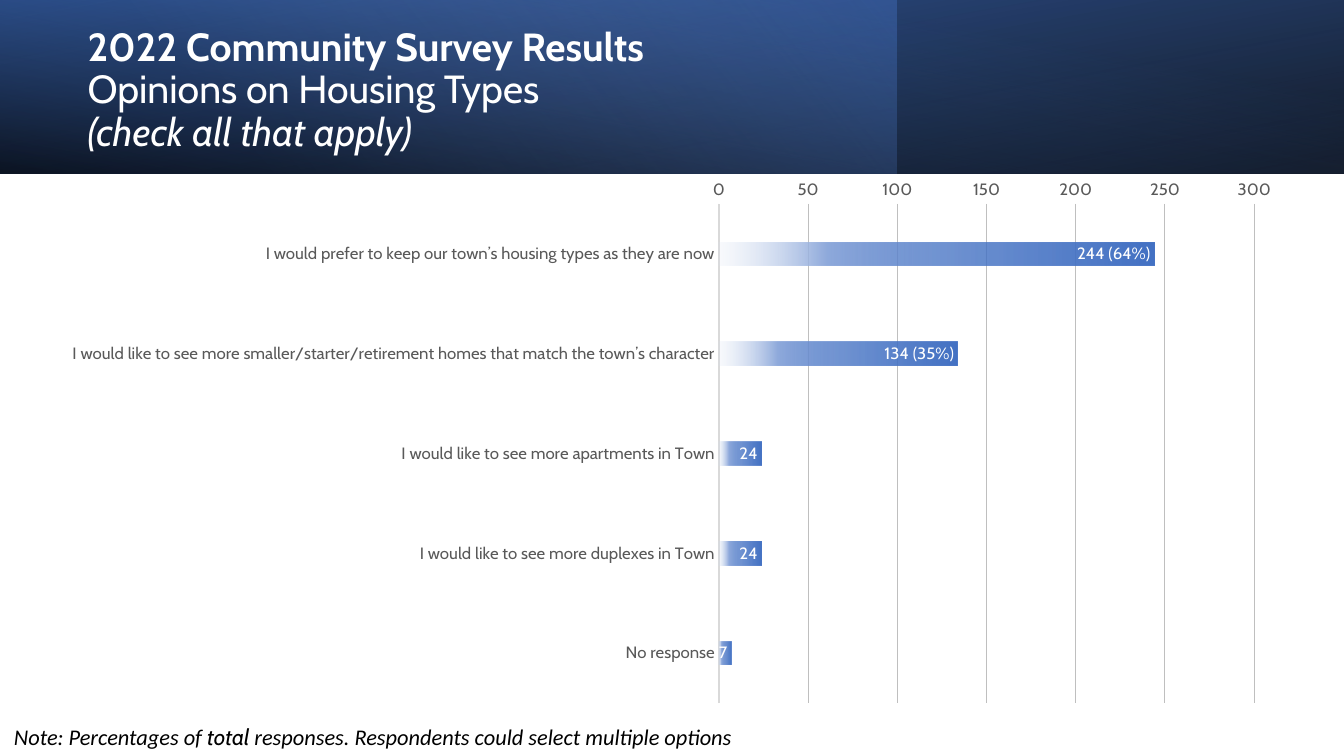
from dataclasses import dataclass

from lxml import etree
from pptx import Presentation
from pptx.chart.data import CategoryChartData
from pptx.dml.color import RGBColor
from pptx.enum.chart import XL_AXIS_CROSSES, XL_CHART_TYPE, XL_LABEL_POSITION, XL_TICK_MARK
from pptx.enum.shapes import MSO_SHAPE
from pptx.enum.text import MSO_ANCHOR, MSO_AUTO_SIZE
from pptx.oxml import parse_xml
from pptx.oxml.ns import nsdecls, qn
from pptx.util import Inches, Pt

RECTANGLE = MSO_SHAPE.RECTANGLE
BAR = XL_CHART_TYPE.BAR_CLUSTERED
INSIDE_END = XL_LABEL_POSITION.INSIDE_END
NO_TICK = XL_TICK_MARK.NONE
AT_MAXIMUM = XL_AXIS_CROSSES.MAXIMUM
MIDDLE = MSO_ANCHOR.MIDDLE
GROW = MSO_AUTO_SIZE.SHAPE_TO_FIT_TEXT

SLIDE_WIDTH, SLIDE_HEIGHT = 13.33, 7.5
BANNER_HEIGHT = 1.72
CHART_BOX = (0.47, 1.79, 12.39, 5.53)
PLOT_BOX = (7.13, 1.9, 5.31, 5.07)

TITLE = {"size": Pt(28), "name": "Cabin", "color": "FFFFFF"}
NOTE = {"size": Pt(16), "name": "Calibri", "color": "000000", "italic": True}
AXIS = {"size": Pt(12), "name": "Cabin", "color": "595959"}
BAR_LABEL = {"size": Pt(12), "name": "Cabin", "color": "FFFFFF"}


@dataclass
class Stop:
    position: int
    color: str
    opacity: int = 100


@dataclass
class BannerLayer:
    width: float
    angle: int
    stops: list[Stop]
    flipped: bool = False
    rotation: int = 0


@dataclass
class Answer:
    wording: str
    count: int
    label: str = ""


@dataclass
class Span:
    wording: str
    style: dict


BANNER = [
    BannerLayer(SLIDE_WIDTH, 100, [Stop(0, "000000", 96), Stop(100, "2F5597")], True, 180),
    BannerLayer(8.89, 140, [Stop(0, "4472C4", 41), Stop(74, "8FAADC", 0)]),
    BannerLayer(SLIDE_WIDTH, 260, [Stop(0, "000000", 63), Stop(78, "4472C4", 15)], True),
]
BAR_STOPS = [Stop(0, "4472C4"), Stop(51, "4472C4", 75), Stop(75, "8FAADC"), Stop(100, "DAE3F3", 15)]
ANSWERS = [
    Answer("I would prefer to keep our town’s housing types as they are now", 244, "244 (64%)"),
    Answer("I would like to see more smaller/starter/retirement homes that match the town’s character",
           134, "134 (35%)"),
    Answer("I would like to see more apartments in Town", 24),
    Answer("I would like to see more duplexes in Town", 24),
    Answer("No response", 7),
]
TITLE_LINES = [
    Span("2022 Community Survey Results", TITLE | {"bold": True}),
    Span("Opinions on Housing Types", TITLE),
    Span("(check all that apply)", TITLE | {"italic": True}),
]
NOTE_SPANS = [
    Span("Note: Percentages of ", NOTE),
    Span("total", NOTE | {"name": "Cabin"}),
    Span(" responses. Respondents could select multiple options", NOTE),
]


def rgb(color: str) -> RGBColor:
    return RGBColor.from_string(color)


def style_font(font, style: dict) -> None:
    for name, value in style.items():
        if name == "color":
            font.color.rgb = rgb(value)
        else:
            setattr(font, name, value)


def fill_gradient(fill, properties, stops: list[Stop], angle: int) -> None:
    """Give the fill its stops, with opacity, and a clockwise angle."""
    fill.gradient()
    gradient = properties.find(qn("a:gradFill"))
    for child in list(gradient):
        gradient.remove(child)
    stop_list = etree.SubElement(gradient, qn("a:gsLst"))
    for stop in stops:
        mark = etree.SubElement(stop_list, qn("a:gs"), pos=str(stop.position * 1000))
        color = etree.SubElement(mark, qn("a:srgbClr"), val=stop.color)
        if stop.opacity < 100:
            etree.SubElement(color, qn("a:alpha"), val=str(stop.opacity * 1000))
    etree.SubElement(gradient, qn("a:lin"), ang=str(angle * 60000), scaled="0")


def add_banner_layer(page, layer: BannerLayer) -> None:
    shape = page.shapes.add_shape(RECTANGLE, 0, 0, Inches(layer.width), Inches(BANNER_HEIGHT))
    shape.shadow.inherit = False
    shape.line.fill.background()
    shape.rotation = layer.rotation
    properties = shape.element.spPr
    if layer.flipped:
        properties.find(qn("a:xfrm")).set("flipH", "1")
    fill_gradient(shape.fill, properties, layer.stops, layer.angle)


def add_text(page, place: tuple, spans: list[Span], stacked: bool = False):
    """Write the spans as one paragraph, each on its own line when stacked."""
    box = page.shapes.add_textbox(*map(Inches, place))
    para = box.text_frame.paragraphs[0]
    for index, span in enumerate(spans):
        if stacked and index:
            para.add_line_break()
        run = para.add_run()
        run.text = span.wording
        style_font(run.font, span.style)
    return box


def place_plot(chart) -> None:
    """Fix the inner plot area as fractions of the chart box."""
    left, top, width, height = CHART_BOX
    plot_left, plot_top, plot_width, plot_height = PLOT_BOX
    fractions = {"x": (plot_left - left) / width, "y": (plot_top - top) / height,
                 "w": plot_width / width, "h": plot_height / height}
    parts = "".join(f'<c:{name}Mode val="edge"/>' for name in "xy")
    parts += "".join(f'<c:{name} val="{value:.4f}"/>' for name, value in fractions.items())
    layout = parse_xml(f'<c:layout {nsdecls("c")}><c:manualLayout>'
                       f'<c:layoutTarget val="inner"/>{parts}</c:manualLayout></c:layout>')
    area = chart.element.find(".//" + qn("c:plotArea"))
    for old in area.findall(qn("c:layout")):
        area.remove(old)
    area.insert(0, layout)


def style_axes(chart) -> None:
    categories, values = chart.category_axis, chart.value_axis
    for axis in (categories, values):
        axis.major_tick_mark = axis.minor_tick_mark = NO_TICK
        style_font(axis.tick_labels.font, AXIS)
    categories.reverse_order = True
    categories.crosses = AT_MAXIMUM
    categories.format.line.color.rgb = rgb("D9D9D9")
    categories.format.line.width = Pt(1.5)
    values.minimum_scale, values.maximum_scale, values.major_unit = 0, 300, 50
    values.format.line.fill.background()
    values.major_gridlines.format.line.color.rgb = rgb("BFBFBF")
    values.major_gridlines.format.line.width = Pt(0.75)


def add_answer_chart(page) -> None:
    data = CategoryChartData()
    data.categories = [answer.wording for answer in ANSWERS]
    data.add_series("Series 1", [answer.count for answer in ANSWERS])
    chart = page.shapes.add_chart(BAR, *map(Inches, CHART_BOX), data).chart
    chart.has_legend = chart.has_title = False
    style_font(chart.font, {"size": Pt(10), "name": "Calibri", "color": "000000"})
    place_plot(chart)
    style_axes(chart)

    plot = chart.plots[0]
    plot.gap_width, plot.overlap, plot.vary_by_categories = 326, -58, False
    series = plot.series[0]
    series.invert_if_negative = False
    fill = series.format.fill
    fill_gradient(fill, series._element.spPr, BAR_STOPS, 180)

    labels = series.data_labels
    labels.show_value = True
    labels.position = INSIDE_END
    style_font(labels.font, BAR_LABEL)
    for index, answer in enumerate(ANSWERS):
        if answer.label:
            label = series.points[index].data_label
            run = label.text_frame.paragraphs[0].add_run()
            run.text = answer.label
            style_font(run.font, BAR_LABEL)
            label.position = INSIDE_END


def main() -> None:
    deck = Presentation()
    deck.slide_width, deck.slide_height = Inches(SLIDE_WIDTH), Inches(SLIDE_HEIGHT)
    page = deck.slides.add_slide(deck.slide_layouts[6])
    for layer in BANNER:
        add_banner_layer(page, layer)
    title = add_text(page, (0.77, 0.27, 7.72, 1.27), TITLE_LINES, stacked=True)
    title.text_frame.word_wrap = True
    title.text_frame.vertical_anchor = MIDDLE
    title.text_frame.paragraphs[0].line_spacing = 0.9
    add_answer_chart(page)
    note = add_text(page, (0.04, 7.12, 7.42, 0.37), NOTE_SPANS)
    note.text_frame.word_wrap = False
    note.text_frame.auto_size = GROW
    deck.save("out.pptx")


if __name__ == "__main__":
    main()
